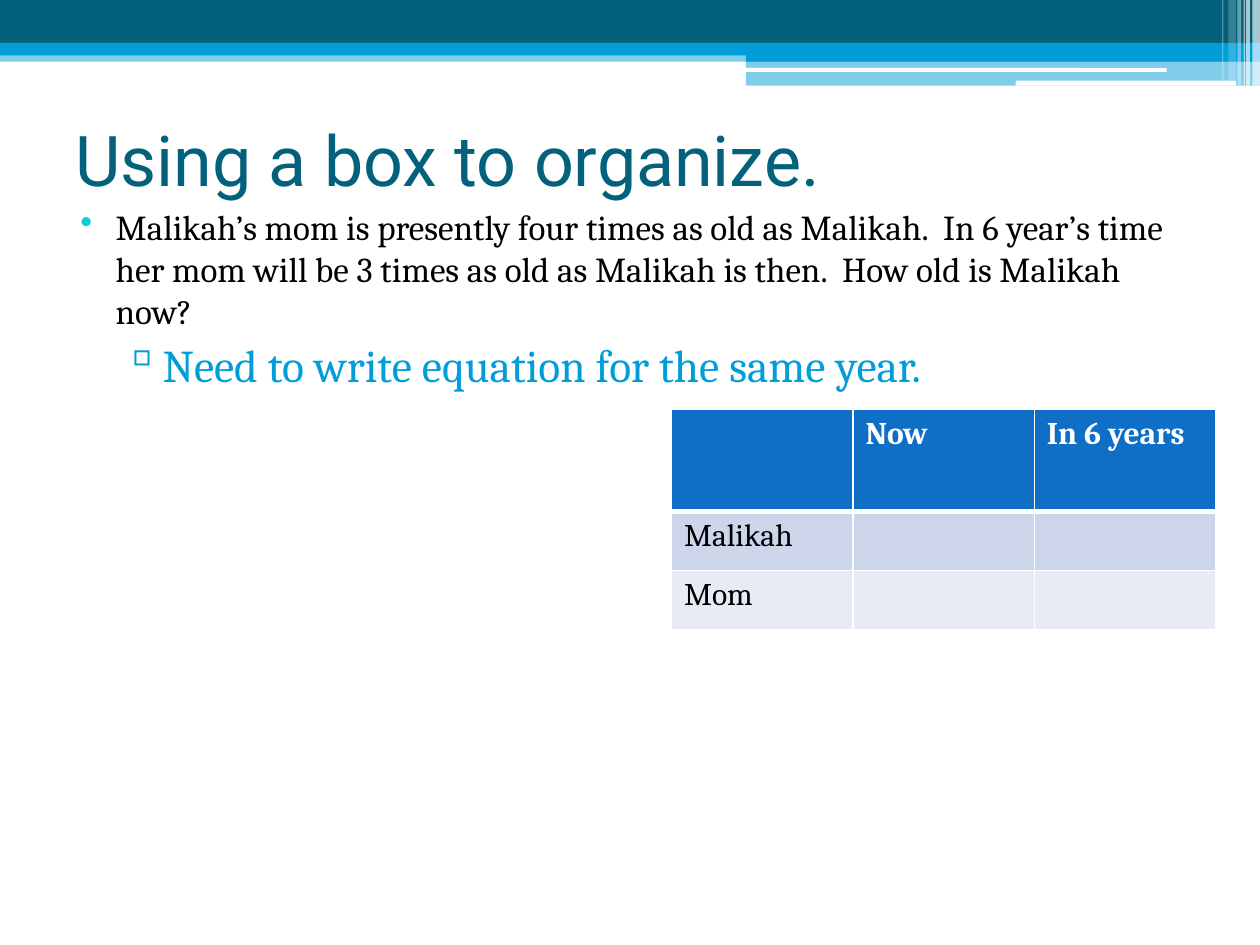
import pptx
import pptx.dml.color
import pptx.enum.shapes
import pptx.enum.text
import pptx.oxml.ns
import pptx.util
from lxml import etree

THEME = {
    "dark": "04617B", "sky": "009DD9", "aqua": "0BD0D9", "white": "FFFFFF",
    "ink": "000000", "header": "0F6FC6", "bands": ["CCD5EA", "E7EBF5"],
    "title_font": "Roboto", "body_font": "Cambria",
    "title_size": 40, "problem_size": 20, "hint_size": 26, "table_size": 18,
}

deck = pptx.Presentation()
deck.slide_width = pptx.util.Inches(10)
deck.slide_height = pptx.util.Inches(7.5)
column = deck.slide_width / 100
row = deck.slide_height / 75
slide = deck.slides.add_slide(deck.slide_layouts[6])
rgb = pptx.dml.color.RGBColor.from_string
qn = pptx.oxml.ns.qn


def grid(left, top, width, height):
    return [round(left * column), round(top * row), round(width * column), round(height * row)]


def write(paragraph, words, font, size, color, bold=False):
    run = paragraph.add_run()
    run.text = words
    run.font.name = font
    run.font.size = pptx.util.Pt(size)
    run.font.color.rgb = rgb(THEME[color])
    run.font.bold = bold


RECT = pptx.enum.shapes.MSO_SHAPE.RECTANGLE
ROUND = pptx.enum.shapes.MSO_SHAPE.ROUNDED_RECTANGLE
banner = [
    (RECT, (0, 4, 100, 0.9), "sky", 50),
    (RECT, (0, 0, 100, 3.4), "dark", 100),
    (RECT, (0, 3.4, 100, 1), "sky", 100),
    (RECT, (59.2, 3.9, 40.8, 1), "sky", 100),
    (RECT, (59.2, 4.8, 40.8, 2), "sky", 50),
    (ROUND, (59.1, 5.4, 33.5, 0.3), "white", 100),
    (ROUND, (80.6, 6.4, 17.5, 0.4), "white", 100),
]
stripes = [
    (99.4, 0.6, 6.8, 65), (98.9, 0.3, 6.8, 65), (98.7, 0.1, 6.8, 60),
    (98.2, 0.3, 6.8, 40), (97.5, 0.6, 6.4, 20), (97, 0.1, 6.4, 30),
]
banner += [(RECT, (left, 0, width, height), "white", opacity)
           for left, width, height, opacity in stripes]

for outline, place, color, opacity in banner:
    bar = slide.shapes.add_shape(outline, *grid(*place))
    bar.shadow.inherit = False
    bar.line.fill.background()
    bar.fill.solid()
    bar.fill.fore_color.rgb = rgb(THEME[color])
    if opacity < 100:
        tint = bar.fill._xPr.find(".//" + qn("a:srgbClr"))
        etree.SubElement(tint, qn("a:alpha"), val=str(opacity * 1000))

heading = slide.shapes.add_textbox(*grid(5, 6.7, 90, 11.7)).text_frame
heading.word_wrap = True
heading.vertical_anchor = pptx.enum.text.MSO_ANCHOR.MIDDLE
write(heading.paragraphs[0], "Using a box to organize.",
      THEME["title_font"], THEME["title_size"], "dark")

exercise = slide.shapes.add_textbox(*grid(4.2, 15.8, 90, 47.3)).text_frame
exercise.word_wrap = True
points = [
    ("Malikah’s mom is presently four times as old as Malikah.  In 6 year’s time "
     "her mom will be 3 times as old as Malikah is then.  How old is Malikah now?",
     "problem_size", "ink", 0, 4, -2.8, "•", "aqua"),
    ("Need to write equation for the same year.",
     "hint_size", "sky", 1, 7.2, -2.7, "▫", "sky"),
]
for index, (words, size, color, level, margin, indent, mark, mark_color) in enumerate(points):
    point = exercise.add_paragraph() if index else exercise.paragraphs[0]
    point.level = level
    point.space_before = pptx.util.Pt(3)
    write(point, words, THEME["body_font"], THEME[size], color)
    layout = point._p.get_or_add_pPr()
    layout.set("marL", str(round(margin * column)))
    layout.set("indent", str(round(indent * column)))
    bullet_color = etree.SubElement(layout, qn("a:buClr"))
    etree.SubElement(bullet_color, qn("a:srgbClr"), val=THEME[mark_color])
    etree.SubElement(layout, qn("a:buChar"), char=mark)

ages = [["", "Now", "In 6 years"], ["Malikah", "", ""], ["Mom", "", ""]]
box = slide.shapes.add_table(3, 3, *grid(53.3, 32.5, 43.2, 17.5)).table
for person, height in zip(box.rows, [8.1, 4.7, 4.7]):
    person.height = round(height * row)
for period in box.columns:
    period.width = round(14.4 * column)

for r, labels in enumerate(ages):
    for c, label in enumerate(labels):
        cell = box.cell(r, c)
        edges = {"L": 1, "R": 1, "T": 3 if r == 1 else 1, "B": 3 if r == 0 else 1}
        for side, weight in edges.items():
            edge = etree.SubElement(cell._tc.get_or_add_tcPr(), qn("a:ln" + side),
                                    w=str(pptx.util.Pt(weight)))
            paint = etree.SubElement(edge, qn("a:solidFill"))
            etree.SubElement(paint, qn("a:srgbClr"), val=THEME["white"])
        cell.fill.solid()
        cell.fill.fore_color.rgb = rgb(THEME["bands"][r - 1] if r else THEME["header"])
        if label:
            write(cell.text_frame.paragraphs[0], label, THEME["body_font"],
                  THEME["table_size"], "ink" if r else "white", bold=r == 0)

deck.save("out.pptx")
